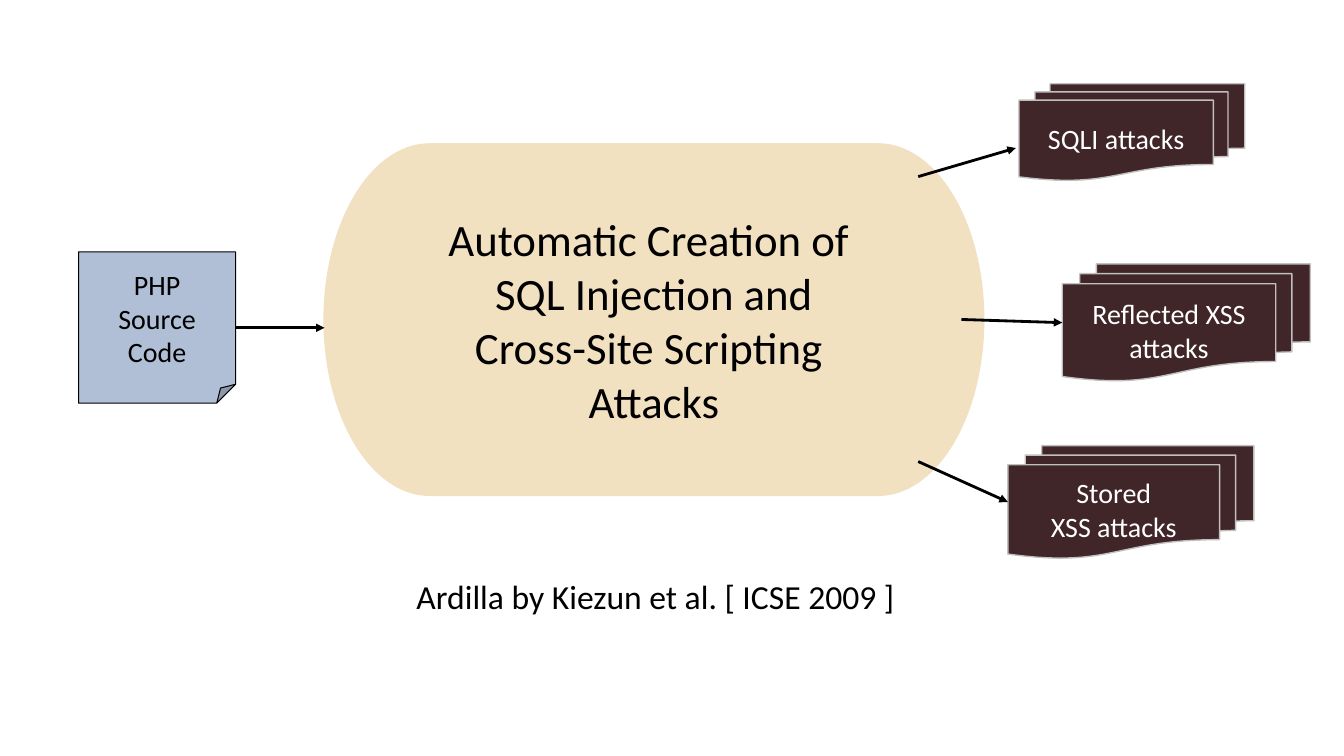
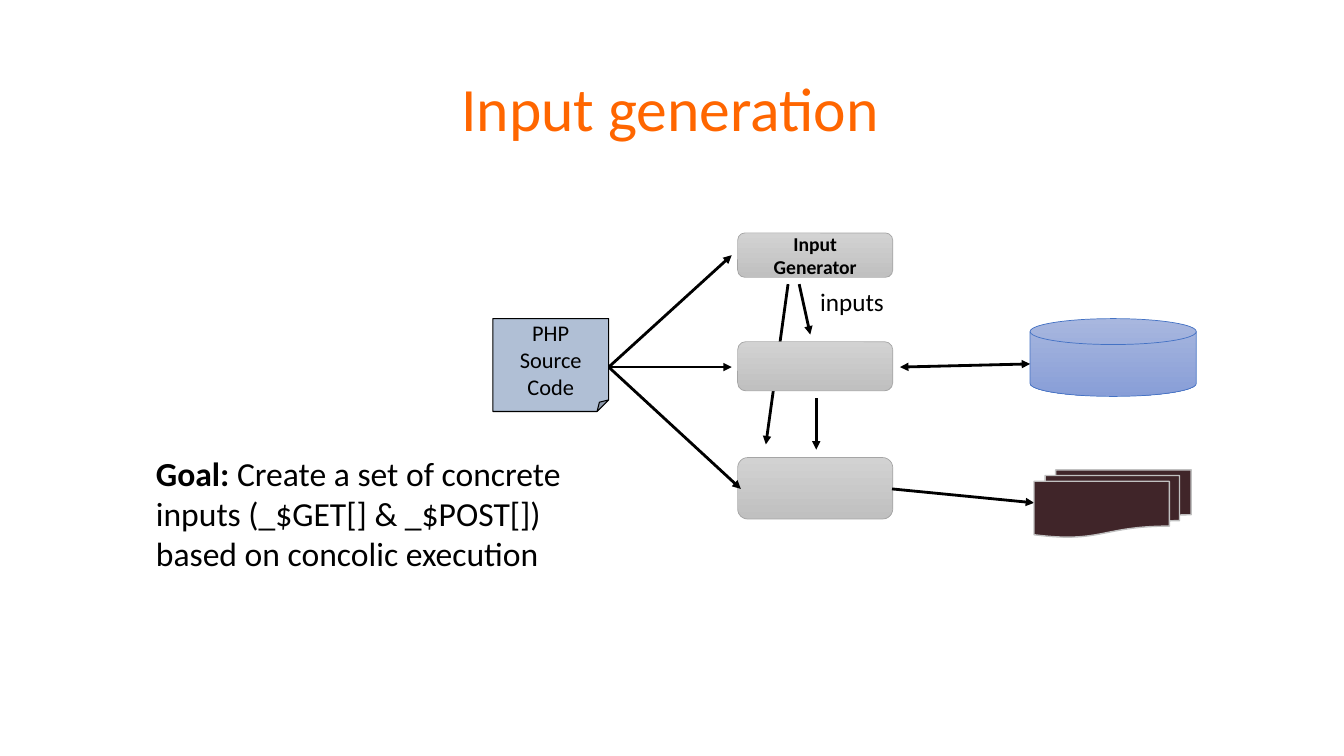
from dataclasses import dataclass

from lxml.etree import SubElement
from pptx import Presentation
from pptx.dml.color import RGBColor
from pptx.enum.shapes import MSO_CONNECTOR, MSO_SHAPE
from pptx.enum.text import MSO_ANCHOR, PP_ALIGN
from pptx.oxml.ns import qn
from pptx.util import Cm, Pt

FONT = "Calibri"
BLACK = RGBColor(0x00, 0x00, 0x00)
WHITE = RGBColor(0xFF, 0xFF, 0xFF)
ORANGE = RGBColor(0xFF, 0x66, 0x00)
SAND = RGBColor(0xF2, 0xE1, 0xC1)
MAROON = RGBColor(0x40, 0x25, 0x29)
SILVER = RGBColor(0xC0, 0xC0, 0xC0)
STEEL = RGBColor(0xB0, 0xBF, 0xD5)
GRAY_TOP = RGBColor(0xD2, 0xD2, 0xD2)
GRAY_LINE = RGBColor(0xA5, 0xA5, 0xA5)
DISK_TOP = RGBColor(0xA8, 0xB7, 0xDF)
DISK_BOTTOM = RGBColor(0x88, 0x9E, 0xD7)
DISK_LINE = RGBColor(0x44, 0x72, 0xC4)


@dataclass(frozen=True)
class Style:
    """Look of one kind of diagram node; two fills make a vertical gradient."""
    preset: MSO_SHAPE
    fills: tuple[RGBColor, ...]
    line: RGBColor | None = None
    line_width: float = 0
    text_color: RGBColor = BLACK
    bold: bool = False
    wrap: bool = True
    fold: int | None = None  # in 1/100000 of the short side


@dataclass(frozen=True)
class Node:
    """A shape with its box in centimetres."""
    style: Style
    left: float
    top: float
    width: float
    height: float
    text: str = ""
    size: int = 20


@dataclass(frozen=True)
class Arrow:
    """An arrow between two points in centimetres."""
    start: tuple[float, float]
    end: tuple[float, float]
    both_ends: bool = False


@dataclass(frozen=True)
class Label:
    """A text box, optionally opening with a bold lead."""
    left: float
    top: float
    width: float
    height: float
    text: str
    size: int
    align: PP_ALIGN = PP_ALIGN.LEFT
    color: RGBColor = BLACK
    anchor: MSO_ANCHOR = MSO_ANCHOR.TOP
    line_spacing: float = 1.0
    lead: str = ""


PROCESS = Style(MSO_SHAPE.FLOWCHART_TERMINATOR, (SAND,), wrap=False)
DOCUMENTS = Style(MSO_SHAPE.FLOWCHART_MULTIDOCUMENT, (MAROON,), SILVER, 1, WHITE)
SOURCE = Style(MSO_SHAPE.FOLDED_CORNER, (STEEL,), BLACK, 0.75, wrap=False, fold=12500)
STAGE = Style(MSO_SHAPE.ROUNDED_RECTANGLE, (GRAY_TOP, SILVER), GRAY_LINE, 0.5,
              bold=True)
DATABASE = Style(MSO_SHAPE.FLOWCHART_MAGNETIC_DISK, (DISK_TOP, DISK_BOTTOM),
                 DISK_LINE, 0.5)


def format_paragraph(paragraph, size: int, color: RGBColor, align: PP_ALIGN) -> None:
    paragraph.alignment = align
    paragraph.font.name = FONT
    paragraph.font.size = Pt(size)
    paragraph.font.color.rgb = color


def set_fold(shape, fold: int) -> None:
    """Size the folded corner, which python-pptx lists without adjustments."""
    geometry = shape._element.spPr.find(qn("a:prstGeom"))
    guides = geometry.find(qn("a:avLst"))
    if guides is None:
        guides = SubElement(geometry, qn("a:avLst"))
    SubElement(guides, qn("a:gd"), name="adj", fmla=f"val {fold}")


def draw_node(slide, node: Node) -> None:
    style = node.style
    shape = slide.shapes.add_shape(
        style.preset, Cm(node.left), Cm(node.top), Cm(node.width), Cm(node.height))
    shape.shadow.inherit = False
    if style.fold is not None:
        set_fold(shape, style.fold)
    if len(style.fills) == 1:
        shape.fill.solid()
        shape.fill.fore_color.rgb = style.fills[0]
    else:
        shape.fill.gradient()
        shape.fill.gradient_angle = 270
        for stop, color in zip(shape.fill.gradient_stops, style.fills):
            stop.color.rgb = color
    if style.line is None:
        shape.line.fill.background()
    else:
        shape.line.color.rgb = style.line
        shape.line.width = Pt(style.line_width)
    if node.text:
        frame = shape.text_frame
        frame.word_wrap = style.wrap
        frame.vertical_anchor = MSO_ANCHOR.MIDDLE
        frame.text = node.text
        for paragraph in frame.paragraphs:
            format_paragraph(paragraph, node.size, style.text_color, PP_ALIGN.CENTER)
            paragraph.font.bold = style.bold


def draw_arrow(slide, arrow: Arrow) -> None:
    points = [Cm(value) for value in (*arrow.start, *arrow.end)]
    connector = slide.shapes.add_connector(MSO_CONNECTOR.STRAIGHT, *points)
    connector.line.color.rgb = BLACK
    connector.line.width = Pt(2)
    properties = connector._element.spPr
    outline = properties.find(qn("a:ln"))
    for end in ("a:headEnd", "a:tailEnd") if arrow.both_ends else ("a:tailEnd",):
        SubElement(outline, qn(end), type="triangle")
    SubElement(properties, qn("a:effectLst"))


def draw_label(slide, label: Label) -> None:
    box = slide.shapes.add_textbox(
        Cm(label.left), Cm(label.top), Cm(label.width), Cm(label.height))
    frame = box.text_frame
    frame.word_wrap = True
    frame.vertical_anchor = label.anchor
    paragraph = frame.paragraphs[0]
    format_paragraph(paragraph, label.size, label.color, label.align)
    paragraph.line_spacing = label.line_spacing
    if label.lead:
        lead = paragraph.add_run()
        lead.text = label.lead
        lead.font.bold = True
    paragraph.add_run().text = label.text


def draw_slide(presentation, items: list[Node | Arrow | Label]) -> None:
    slide = presentation.slides.add_slide(presentation.slide_layouts[6])
    painters = {Node: draw_node, Arrow: draw_arrow, Label: draw_label}
    for item in items:
        painters[type(item)](slide, item)


def title(text: str) -> Label:
    return Label(2.29, 0.97, 29.21, 3.68, text, 44, PP_ALIGN.CENTER, ORANGE,
                 MSO_ANCHOR.MIDDLE, 0.9)


def stage(top: float, height: float, text: str = "") -> Node:
    return Node(STAGE, 18.59, top, 3.91, height, text, 14)


SOURCE_TEXT = "PHP\nSource\nCode"
SOURCE_EXIT = (15.34, 9.25)

OVERVIEW = [
    # Tool and the attacks it creates
    Node(PROCESS, 8.15, 3.61, 16.66, 8.89,
         "Automatic Creation of \vSQL Injection and\v"
         "Cross-Site Scripting \vAttacks", 32),
    Node(DOCUMENTS, 25.4, 11.23, 6.2, 2.84, "Stored\nXSS attacks"),
    Node(DOCUMENTS, 26.77, 6.65, 6.25, 2.95, "Reflected XSS attacks"),
    Node(DOCUMENTS, 25.68, 2.11, 5.69, 2.44, "SQLI attacks"),
    # Flow
    Arrow((5.64, 8.26), (8.18, 8.26)),
    Arrow((23.14, 4.45), (25.6, 3.73)),
    Arrow((24.23, 8.05), (26.77, 8.13)),
    Arrow((23.14, 11.63), (25.4, 12.65)),
    # Citation and input
    Label(1.42, 14.4, 30.2, 3.38, "Ardilla by Kiezun et al. [ ICSE 2009 ]", 24,
          PP_ALIGN.CENTER),
    Node(SOURCE, 1.98, 6.35, 3.96, 3.81, SOURCE_TEXT),
]

INPUT_GENERATION = [
    title("Input generation"),
    # Outer stages and their outputs
    stage(5.87, 1.12, "Input\nGenerator"),
    stage(11.53, 1.55),
    Arrow((22.48, 12.32), (26.06, 12.67)),
    Node(DATABASE, 25.96, 8.03, 4.19, 1.96),
    Arrow((25.96, 9.17), (22.68, 9.25), both_ends=True),
    Node(DOCUMENTS, 26.06, 11.84, 3.96, 1.7),
    # Source code feeds every stage
    *(Arrow(SOURCE_EXIT, end)
      for end in ((18.44, 6.43), (18.44, 9.25), (18.67, 12.32))),
    # Flow between stages; the long arrow runs behind the middle stage
    Arrow((20.14, 7.16), (20.42, 8.43)),
    Arrow((20.57, 10.03), (20.57, 11.33)),
    Label(20.42, 7.09, 3.38, 1.02, "inputs", 18),
    Label(3.68, 11.28, 11.86, 3.33,
          " Create a set of concrete inputs (_$GET[] & _$POST[]) "
          "based on concolic execution", 24, lead="Goal:"),
    Arrow((19.86, 7.16), (19.3, 11.2)),
    stage(8.61, 1.24),
    Node(SOURCE, 12.42, 8.03, 2.92, 2.34, SOURCE_TEXT, 16),
]


def main() -> None:
    presentation = Presentation()
    presentation.slide_width = Cm(33.87)
    presentation.slide_height = Cm(19.05)
    for items in (OVERVIEW, INPUT_GENERATION):
        draw_slide(presentation, items)
    presentation.save("out.pptx")


if __name__ == "__main__":
    main()
